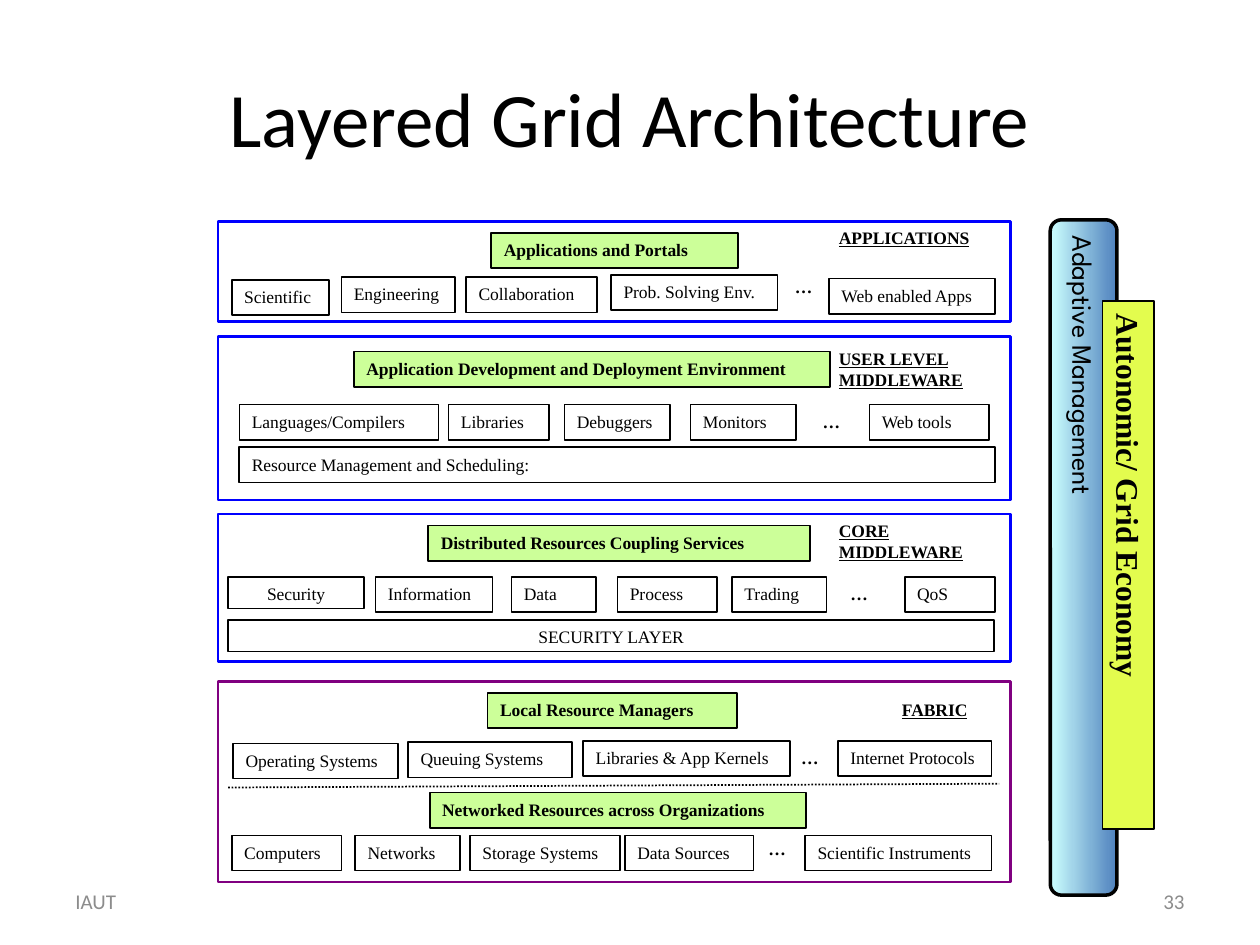
from lxml import etree
from pptx import Presentation
from pptx.dml.color import RGBColor
from pptx.enum import dml, shapes, text
from pptx.oxml import ns
from pptx.util import Inches, Pt

COLORS = {"black": "000000", "blue": "0000FF", "purple": "800080", "green": "CCFF99",
          "yellow": "E3FC4E", "steel": "4F81BD", "cyan": "CCFFFF", "gray": "8C8C8C"}
SERIF = "Times New Roman"
ROW = 0.28

# Each layer: frame top, height, colour; caption; headings; boxes; ellipses
LAYERS = [
    (1.76, 0.79, "blue", ("APPLICATIONS", 6.56, 1.75, 1.6, 0.27),
     [("Applications and Portals", 3.9, 1.85, 1.96)],
     [("Scientific", 1.84, 2.22, 0.77), ("Engineering", 2.71, 2.2, 0.9),
      ("Collaboration", 3.7, 2.2, 1.04), ("Prob. Solving Env.", 4.85, 2.18, 1.32),
      ("Web enabled Apps", 6.58, 2.21, 1.32)],
     [(6.21, 2.14)]),
    (2.67, 1.3, "blue", ("USER LEVEL MIDDLEWARE", 6.56, 2.71, 1.6, 0.43),
     [("Application Development and Deployment Environment", 2.81, 2.79, 3.78)],
     [("Languages/Compilers", 1.9, 3.21, 1.58), ("Libraries", 3.56, 3.21, 0.8),
      ("Debuggers", 4.48, 3.21, 0.84), ("Monitors", 5.48, 3.21, 0.84),
      ("Web tools", 6.9, 3.21, 0.95),
      ("Resource Management and Scheduling:", 1.9, 3.55, 6)],
     [(6.43, 3.21)]),
    (4.08, 1.17, "blue", ("CORE MIDDLEWARE", 6.56, 4.08, 1.6, 0.43),
     [("Distributed Resources Coupling Services", 3.4, 4.17, 3.03)],
     [("Information", 2.98, 4.58, 0.93), ("Data", 4.06, 4.58, 0.67),
      ("Process", 4.9, 4.58, 0.79), ("Trading", 5.81, 4.58, 0.75),
      ("QoS", 7.18, 4.58, 0.72)],
     [(6.65, 4.58)]),
    (5.41, 1.59, "purple", ("FABRIC", 7.06, 5.5, 1.08, 0.27),
     [("Local Resource Managers", 3.87, 5.5, 1.98),
      ("Networked Resources across Organizations", 3.41, 6.29, 2.99)],
     [("Operating Systems", 1.85, 5.9, 1.31), ("Queuing Systems", 3.24, 5.89, 1.3),
      ("Libraries & App Kernels", 4.63, 5.88, 1.64),
      ("Internet Protocols", 6.65, 5.88, 1.22),
      ("Computers", 1.84, 6.63, 0.87), ("Networks", 2.82, 6.63, 0.83),
      ("Storage Systems", 3.73, 6.63, 1.19), ("Data Sources", 4.96, 6.63, 1.02),
      ("Scientific Instruments", 6.39, 6.63, 1.48)],
     [(6.26, 5.88), (6, 6.6)]),
]

prs = Presentation()
prs.slide_width, prs.slide_height = Inches(10), Inches(7.5)
slide = prs.slides.add_slide(prs.slide_layouts[5])


def write(shape, words, size=10, font=SERIF, color="black", bold=False,
          align=text.PP_ALIGN.LEFT, anchor=text.MSO_ANCHOR.TOP):
    frame = shape.text_frame
    frame.word_wrap = True
    frame.vertical_anchor = anchor
    frame.text = words
    paragraph = frame.paragraphs[0]
    paragraph.alignment = align
    paragraph.font.size = Pt(size)
    paragraph.font.name = font
    paragraph.font.bold = bold
    paragraph.font.color.rgb = RGBColor.from_string(COLORS[color])
    return paragraph


def add_box(left, top, width, height, fill=None, line="black", weight=1,
            kind=shapes.MSO_SHAPE.RECTANGLE):
    box = slide.shapes.add_shape(kind, Inches(left), Inches(top), Inches(width), Inches(height))
    box.shadow.inherit = False
    if fill:
        box.fill.solid()
        box.fill.fore_color.rgb = RGBColor.from_string(COLORS[fill])
    else:
        box.fill.background()
    box.line.color.rgb = RGBColor.from_string(COLORS[line])
    box.line.width = Pt(weight)
    return box


title = slide.shapes.title
title.left, title.top, title.width, title.height = map(Inches, (0.5, 0.3, 9, 1.25))
write(title, "Layered Grid Architecture", 44, "Calibri",
      align=text.PP_ALIGN.CENTER, anchor=text.MSO_ANCHOR.MIDDLE)

for top, height, color, caption, headings, components, ellipses in LAYERS:
    add_box(1.73, top, 6.29, height, line=color, weight=1.5)
    for label, left, y, width in headings:
        write(add_box(left, y, width, ROW, fill="green"), label, bold=True)
    for label, left, y, width in components:
        write(add_box(left, y, width, ROW), label)
    for left, y in ellipses:
        dots = slide.shapes.add_textbox(Inches(left), Inches(y), Inches(0.38), Inches(0.27))
        write(dots, "…", bold=True)
    layer_name, *place = caption
    layer_caption = slide.shapes.add_textbox(*map(Inches, place))
    write(layer_caption, layer_name, bold=True).font.underline = True

# Security service and the layer beneath all core services
for label, y, width, weight in [("Security", 4.58, 1.08, 1), ("SECURITY LAYER", 4.92, 6.08, 0.75)]:
    write(add_box(1.81, y, width, 0.25, weight=weight), label, align=text.PP_ALIGN.CENTER)

fabric_divider = slide.shapes.add_connector(
    shapes.MSO_CONNECTOR.STRAIGHT, Inches(1.81), Inches(6.25), Inches(7.93), Inches(6.22))
fabric_divider.line.color.rgb = RGBColor.from_string(COLORS["black"])
fabric_divider.line.width = Pt(1)
fabric_divider.line.dash_style = dml.MSO_LINE.ROUND_DOT
etree.SubElement(fabric_divider._element.spPr, ns.qn("a:effectLst"))

# Vertical bars spanning the layers
management = add_box(5.92, 4.16, 5.36, 0.53, weight=2, kind=shapes.MSO_SHAPE.ROUNDED_RECTANGLE)
management.rotation = 90
management.fill.gradient()
management.fill.gradient_angle = 270
for stop, color in zip(management.fill.gradient_stops, ("steel", "cyan")):
    stop.color.rgb = RGBColor.from_string(COLORS[color])
write(management, "Adaptive Management", 16, "League Spartan", anchor=text.MSO_ANCHOR.MIDDLE)

economy = add_box(6.86, 4.28, 4.19, 0.41, fill="yellow")
economy.rotation = 90
write(economy, "Autonomic/ Grid Economy", 18, bold=True)

for words, left, align in [("IAUT", 0.5, text.PP_ALIGN.LEFT), ("33", 7.17, text.PP_ALIGN.RIGHT)]:
    footer = slide.shapes.add_textbox(Inches(left), Inches(6.95), Inches(2.33), Inches(0.4))
    write(footer, words, 12, "Calibri", "gray", align=align, anchor=text.MSO_ANCHOR.MIDDLE)

prs.save("out.pptx")
